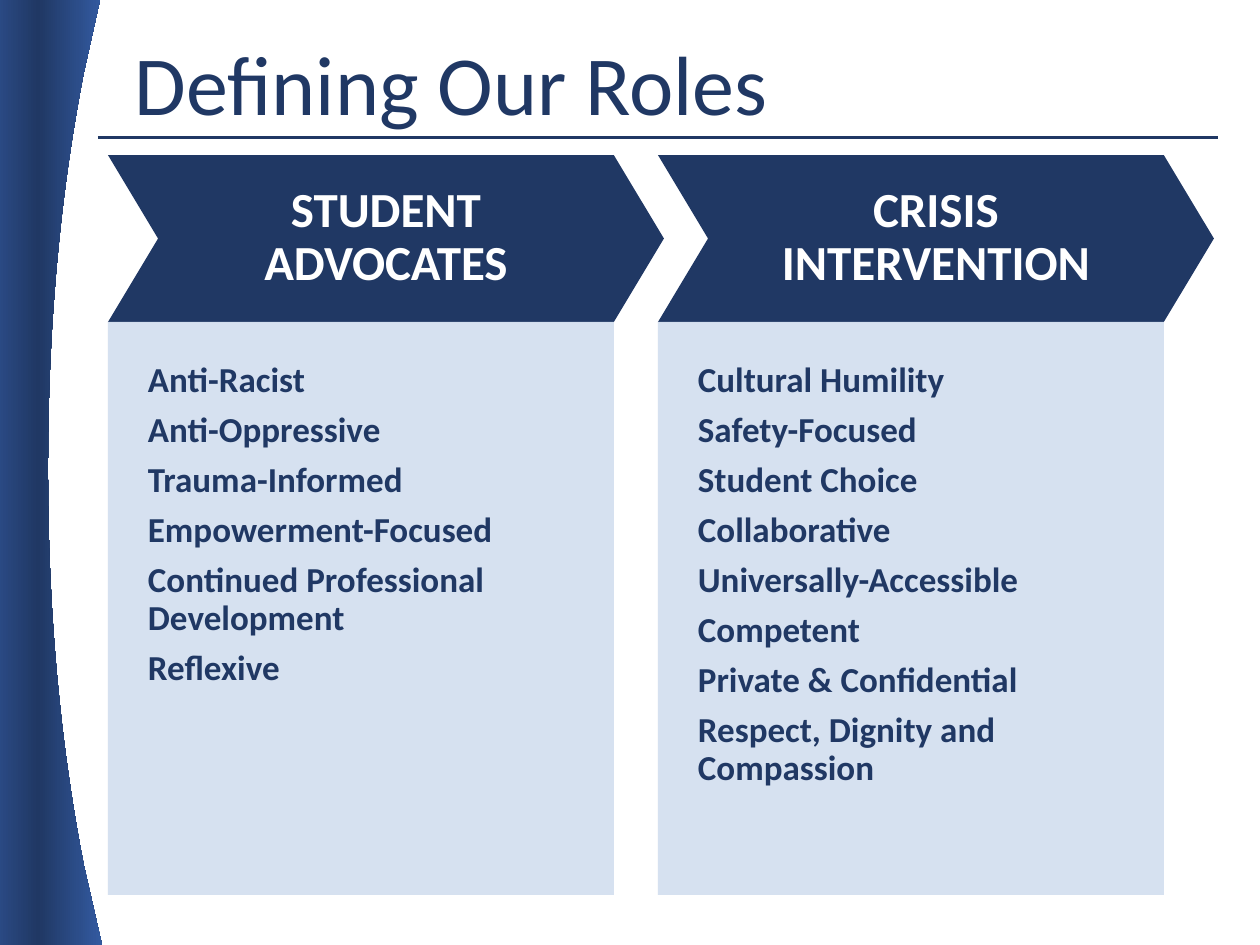
from copy import deepcopy
from dataclasses import dataclass

from lxml import etree
from pptx import Presentation
from pptx import util as u
from pptx.dml.color import RGBColor
from pptx.enum import shapes, text
from pptx.oxml.ns import qn

TITLE = "Defining Our Roles"
ROLES = [
    ("STUDENT ADVOCATES", [
        "Anti-Racist",
        "Anti-Oppressive",
        "Trauma-Informed",
        "Empowerment-Focused",
        "Continued Professional Development",
        "Reflexive",
    ]),
    ("CRISIS INTERVENTION", [
        "Cultural Humility",
        "Safety-Focused",
        "Student Choice",
        "Collaborative",
        "Universally-Accessible",
        "Competent",
        "Private & Confidential",
        "Respect, Dignity and Compassion",
    ]),
]


@dataclass(frozen=True)
class Theme:
    font: str = "Calibri"
    navy: str = "203864"
    white: str = "FFFFFF"
    panel: str = "D2DEEF"
    panel_opacity: int = 90
    band: tuple = ((0, "2B4B86"), (40, "203864"), (100, "335AA0"))
    title_size: int = 48
    heading_size: int = 28
    item_size: int = 20
    item_gap: int = 7
    line_spacing: float = 0.9
    rule_width: float = 1.75


THEME = Theme()
SCALE = u.Inches(1) / 126
PAGE_WIDTH, PAGE_HEIGHT = 1260, 945
LEFT, TOP, STEP = 108, 155, 550
CHEVRON_WIDTH, CHEVRON_HEIGHT, CHEVRON_POINT = 556, 167, 0.3
PANEL_WIDTH, PANEL_HEIGHT = 506, 573
HEADING_INSETS = (20, 20, 20, 20)
PANEL_INSETS = (40, 40, 40, 80)
BAND_CORNERS = [(-4, 945), (-4, 0), (100, 0), (84, 72)]
BAND_CURVES = [
    ((84, 72), (60, 194), (48, 328), (48, 469)),
    ((48, 469), (48, 610), (60, 744), (84, 866)),
]
BAND_FOOT = (102, 945)
CURVE_STEPS = 24


def px(*values):
    return [u.Emu(round(value * SCALE)) for value in values]


def curve_points(curve):
    for step in range(1, CURVE_STEPS + 1):
        t = step / CURVE_STEPS
        weights = ((1 - t) ** 3, 3 * t * (1 - t) ** 2, 3 * t * t * (1 - t), t ** 3)
        yield tuple(sum(w * point[axis] for w, point in zip(weights, curve)) for axis in (0, 1))


def add_band(page):
    points = BAND_CORNERS + [point for curve in BAND_CURVES for point in curve_points(curve)]
    builder = page.shapes.build_freeform(*px(*BAND_FOOT), scale=1.0)
    builder.add_line_segments([px(*point) for point in points], close=True)
    band = builder.convert_to_shape()
    band.shadow.inherit = False
    band.line.fill.background()
    band.fill.gradient()
    band.fill.gradient_angle = 0
    stop_list = band._element.spPr.find(qn("a:gradFill")).find(qn("a:gsLst"))
    stop_list.append(deepcopy(stop_list[-1]))
    for stop, (position, color) in zip(band.fill.gradient_stops, THEME.band):
        stop.position = position / 100
        stop.color.rgb = RGBColor.from_string(color)


def add_rule(page):
    rule = page.shapes.add_connector(shapes.MSO_CONNECTOR.STRAIGHT, *px(98, 138, 1218, 138))
    rule.line.color.rgb = RGBColor.from_string(THEME.navy)
    rule.line.width = u.Pt(THEME.rule_width)
    etree.SubElement(rule._element.spPr, qn("a:effectLst"))


def write(box, lines, size, color, bold, align, anchor, insets=None, gap=0):
    frame = box.text_frame
    frame.text = "\n".join(lines)
    frame.word_wrap = True
    frame.auto_size = text.MSO_AUTO_SIZE.NONE
    frame.vertical_anchor = anchor
    if insets:
        (frame.margin_left, frame.margin_top,
         frame.margin_right, frame.margin_bottom) = px(*insets)
    for para in frame.paragraphs:
        para.alignment = align
        para.line_spacing = THEME.line_spacing
        para.space_after = u.Pt(gap)
        for span in para.runs:
            span.font.name = THEME.font
            span.font.size = u.Pt(size)
            span.font.bold = bold
            span.font.color.rgb = RGBColor.from_string(color)


def add_box(page, kind, place, color):
    box = page.shapes.add_shape(kind, *px(*place))
    box.shadow.inherit = False
    box.fill.solid()
    box.fill.fore_color.rgb = RGBColor.from_string(color)
    box.line.fill.background()
    return box


def add_role(page, left, heading, items):
    chevron = add_box(page, shapes.MSO_SHAPE.CHEVRON,
                      (left, TOP, CHEVRON_WIDTH, CHEVRON_HEIGHT), THEME.navy)
    chevron.adjustments[0] = CHEVRON_POINT
    write(chevron, [heading], THEME.heading_size, THEME.white, True,
          text.PP_ALIGN.CENTER, text.MSO_ANCHOR.MIDDLE, HEADING_INSETS)

    panel = add_box(page, shapes.MSO_SHAPE.RECTANGLE,
                    (left, TOP + CHEVRON_HEIGHT, PANEL_WIDTH, PANEL_HEIGHT), THEME.panel)
    color = panel._element.spPr.find(qn("a:solidFill"))[0]
    etree.SubElement(color, qn("a:alpha"), val=str(THEME.panel_opacity * 1000))
    write(panel, items, THEME.item_size, THEME.navy, True,
          text.PP_ALIGN.LEFT, text.MSO_ANCHOR.TOP, PANEL_INSETS, THEME.item_gap)


def main():
    deck = Presentation()
    deck.slide_width, deck.slide_height = px(PAGE_WIDTH, PAGE_HEIGHT)
    page = deck.slides.add_slide(deck.slide_layouts[5])

    title = page.shapes.title
    title.left, title.top, title.width, title.height = px(122, 50, 1052, 76)
    write(title, [TITLE], THEME.title_size, THEME.navy, False,
          text.PP_ALIGN.LEFT, text.MSO_ANCHOR.MIDDLE)

    add_band(page)
    add_rule(page)
    for index, (heading, items) in enumerate(ROLES):
        add_role(page, LEFT + index * STEP, heading, items)
    deck.save("out.pptx")


if __name__ == "__main__":
    main()
